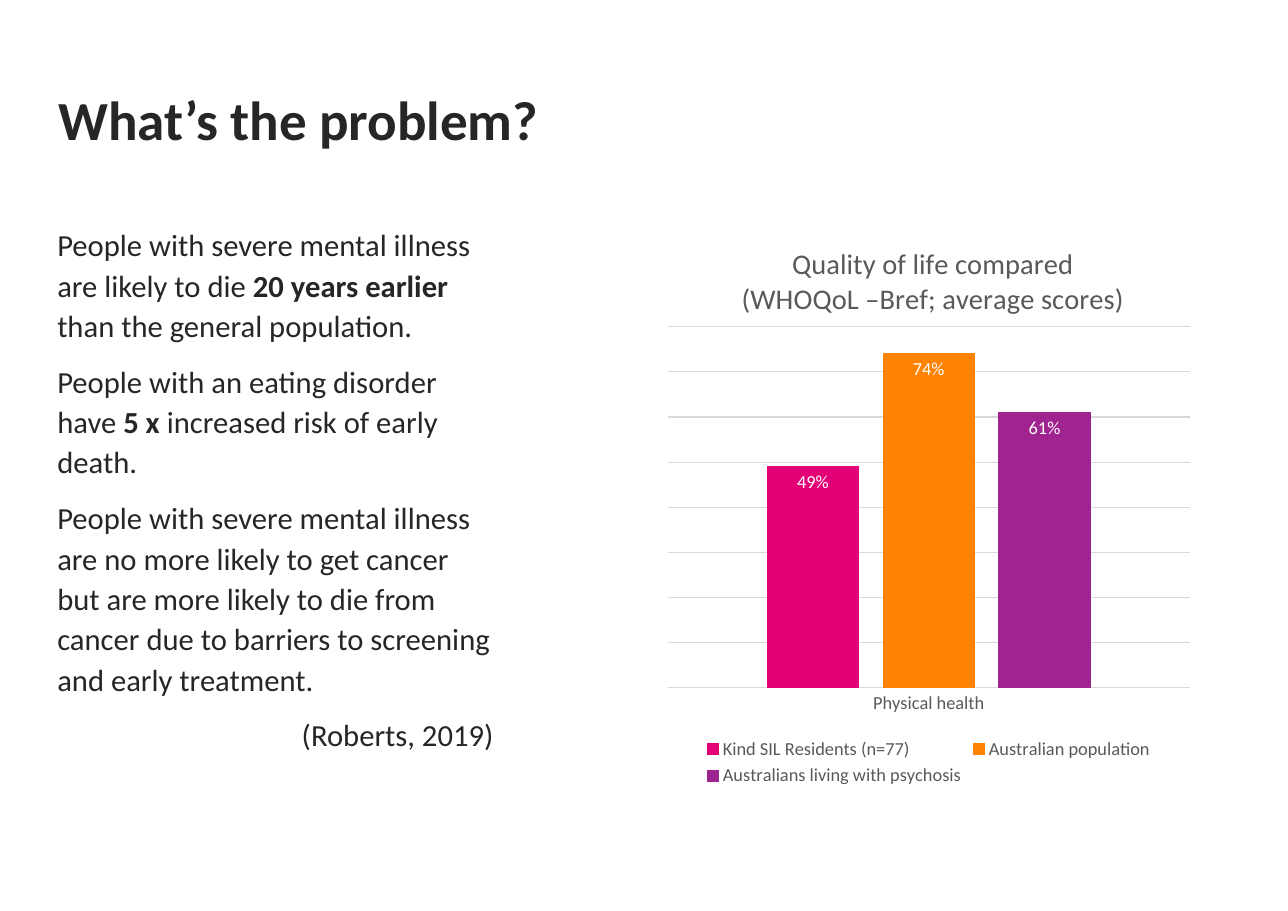
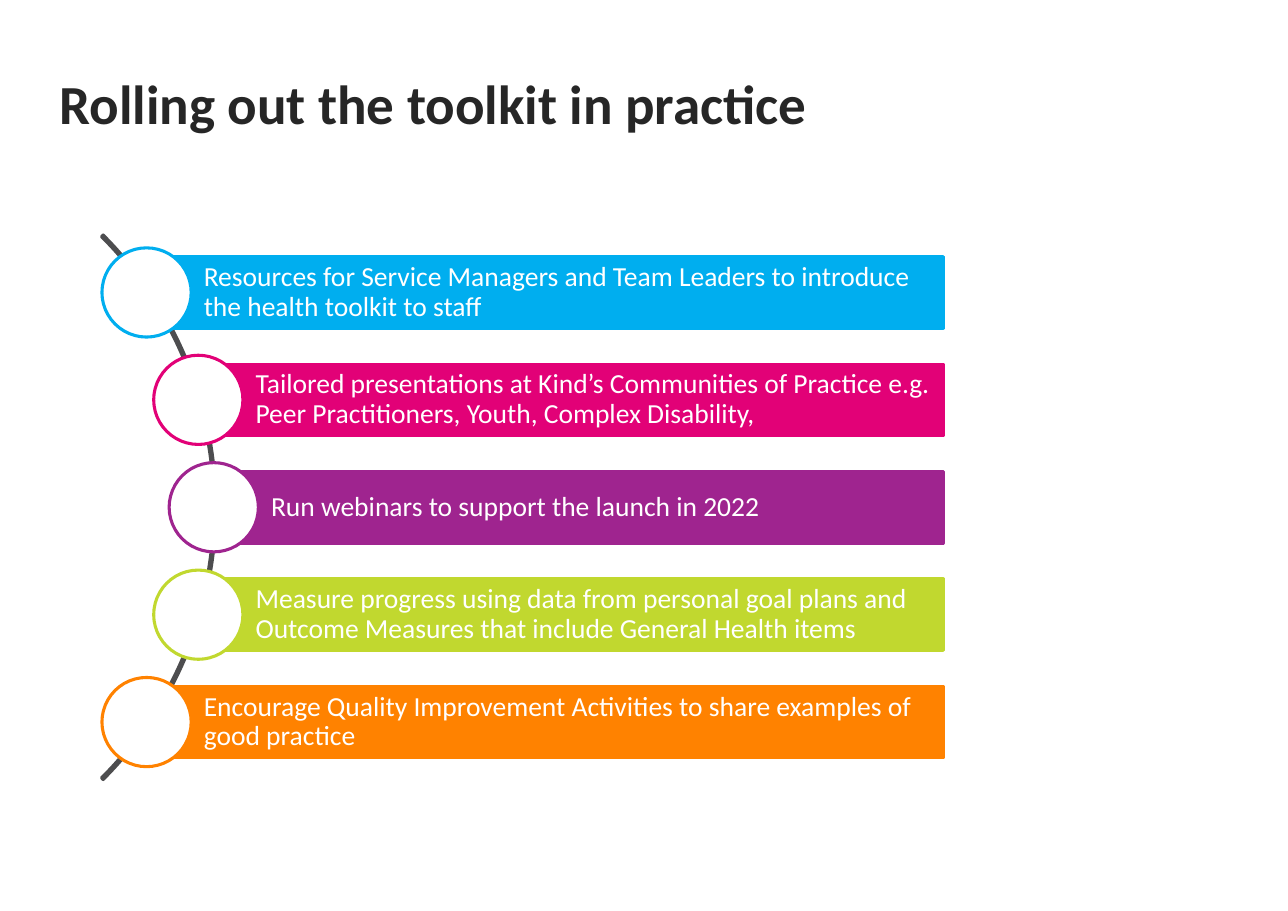
from dataclasses import dataclass

from lxml import etree
from pptx import Presentation
from pptx.chart.data import CategoryChartData
from pptx.dml.color import RGBColor
from pptx.enum import chart as ch, shapes, text
from pptx.oxml import ns
from pptx.util import Inches, Pt

FONT = "Calibri"
COLORS = {
    "ink": "262626", "grey": "595959", "grid": "D9D9D9", "arc": "4D4D4F",
    "white": "FFFFFF", "blue": "00AEEF", "pink": "E20177",
    "purple": "9F248F", "lime": "C1D82F", "orange": "FF8200",
}


@dataclass
class Para:
    runs: list[tuple[str, bool]]  # text, bold
    align: text.PP_ALIGN = text.PP_ALIGN.LEFT


@dataclass
class Series:
    name: str
    value: float
    color: str


@dataclass
class Step:
    left: float
    color: str
    label: str


PROBLEM = [
    Para([("People with severe mental illness are likely to die ", False),
          ("20 years earlier ", True), ("than the general population.", False)]),
    Para([("People with an eating disorder have ", False), ("5 x ", True),
          ("increased risk of early death.", False)]),
    Para([("People with severe mental illness are no more likely to get cancer "
           "but are more likely to die from cancer due to barriers to screening "
           "and early treatment.", False)]),
    Para([("(Roberts, 2019)", False)], text.PP_ALIGN.RIGHT),
]
SCORES = [
    Series("Kind SIL Residents (n=77)", 0.49, "pink"),
    Series("Australian population", 0.74, "orange"),
    Series("Australians living with psychosis", 0.61, "purple"),
]
STEPS = [
    Step(1.33, "blue", "Resources for Service Managers and Team Leaders to introduce "
                       "the health toolkit to staff"),
    Step(1.8, "pink", "Tailored presentations at Kind’s Communities of Practice "
                      "e.g. Peer Practitioners, Youth, Complex Disability,"),
    Step(1.94, "purple", "Run webinars to support the launch in 2022"),
    Step(1.8, "lime", "Measure progress using data from personal goal plans and "
                      "Outcome Measures that include General Health items"),
    Step(1.33, "orange", "Encourage Quality Improvement Activities to share examples of "
                         "good practice"),
]


def rgb(name: str) -> RGBColor:
    return RGBColor.from_string(COLORS[name])


def box(*lengths: float) -> list[Inches]:
    return [Inches(v) for v in lengths]


def style_font(font, size: float, color: str, bold: bool = False) -> None:
    font.name, font.size, font.bold = FONT, Pt(size), bold
    font.color.rgb = rgb(color)


def add_run(p, words: str, size: float, color: str, bold: bool = False) -> None:
    r = p.add_run()
    r.text = words
    style_font(r.font, size, color, bold)


def add_titled_slide(prs, title: str, *place: float):
    slide = prs.slides.add_slide(prs.slide_layouts[5])
    sp = slide.shapes.title
    sp.left, sp.top, sp.width, sp.height = box(*place)
    tf = sp.text_frame
    tf.vertical_anchor = text.MSO_ANCHOR.TOP
    tf.paragraphs[0].alignment = text.PP_ALIGN.LEFT
    add_run(tf.paragraphs[0], title, 36, "ink", True)
    return slide


def add_paragraphs(slide, paras: list[Para], *place: float) -> None:
    tf = slide.shapes.add_textbox(*box(*place)).text_frame
    tf.word_wrap = True
    tf.margin_left = tf.margin_right = Inches(0.09)
    tf.margin_top = tf.margin_bottom = Inches(0.04)
    for i, para in enumerate(paras):
        p = tf.add_paragraph() if i else tf.paragraphs[0]
        p.alignment, p.line_spacing = para.align, 1.1
        p.space_before = Pt(10 if i else 0)
        for words, bold in para.runs:
            add_run(p, words, 20, "ink", bold)


def set_layout(parent, before: str, **fractions: float) -> None:
    """Fix a chart part at fractions of the chart area."""
    for old in parent.findall(ns.qn("c:layout")):
        parent.remove(old)
    layout = etree.Element(ns.qn("c:layout"))
    manual = etree.SubElement(layout, ns.qn("c:manualLayout"))
    if "w" in fractions:
        etree.SubElement(manual, ns.qn("c:layoutTarget"), val="inner")
    for key in "xy":
        etree.SubElement(manual, ns.qn(f"c:{key}Mode"), val="edge")
    for key, value in fractions.items():
        etree.SubElement(manual, ns.qn(f"c:{key}"), val=str(value))
    parent.find(ns.qn(before)).addprevious(layout)


def add_score_chart(slide, scores: list[Series], *place: float) -> None:
    data = CategoryChartData(number_format="0%")
    data.categories = ["Physical health"]
    for s in scores:
        data.add_series(s.name, [s.value])
    chart = slide.shapes.add_chart(
        ch.XL_CHART_TYPE.COLUMN_CLUSTERED, *box(*place), data).chart
    style_font(chart.font, 12, "grey")

    # Title
    tf = chart.chart_title.text_frame
    for i, line in enumerate(["Quality of life compared", "(WHOQoL –Bref; average scores)"]):
        p = tf.add_paragraph() if i else tf.paragraphs[0]
        p.alignment = text.PP_ALIGN.CENTER
        add_run(p, line, 18.6, "grey")
    title = chart.chart_title._element
    chart.chart_title.include_in_layout = False
    set_layout(title, "c:overlay", x=0.15, y=0.04)

    # Legend
    chart.has_legend = True
    chart.legend.position = ch.XL_LEGEND_POSITION.BOTTOM
    chart.legend.include_in_layout = False
    style_font(chart.legend.font, 12, "grey")

    # Axes
    cat, val = chart.category_axis, chart.value_axis
    cat.major_tick_mark = ch.XL_TICK_MARK.NONE
    style_font(cat.tick_labels.font, 12, "grey")
    val.visible = False
    val.minimum_scale, val.maximum_scale, val.major_unit = 0, 0.8, 0.1
    val.has_major_gridlines = True
    for line in (cat.format.line, val.major_gridlines.format.line):
        line.color.rgb, line.width = rgb("grid"), Pt(0.75)

    # Columns
    plot = chart.plots[0]
    plot.gap_width, plot.overlap, plot.vary_by_categories = 219, -27, False
    set_layout(chart._chartSpace.chart.plotArea, "c:barChart",
               x=0.02, y=0.19, w=0.96, h=0.63)
    for s, series in zip(scores, plot.series):
        series.format.fill.solid()
        series.format.fill.fore_color.rgb = rgb(s.color)
        series.format.line.color.rgb = rgb(s.color)
        series.format.line.width = Pt(0.75)
        labels = series.data_labels
        labels.show_value = True
        labels.number_format, labels.number_format_is_linked = "0%", False
        labels.position = ch.XL_LABEL_POSITION.INSIDE_END
        style_font(labels.font, 12, "white")


def add_outlined(slide, kind, line: str, fill: str | None, *place: float):
    sp = slide.shapes.add_shape(kind, *box(*place))
    sp.shadow.inherit = False
    if fill:
        sp.fill.solid()
        sp.fill.fore_color.rgb = rgb(fill)
    else:
        sp.fill.background()
    sp.line.color.rgb, sp.line.width = rgb(line), Pt(2)
    return sp


def add_steps(slide, steps: list[Step]) -> None:
    right, first_mid, pitch, bar_h, circle = 8.56, 2.655, 0.975, 0.65, 0.81
    kinds = shapes.MSO_SHAPE

    # Curve behind the steps
    arc = add_outlined(slide, kinds.BLOCK_ARC, "arc", None, -5.03, 1.11, 6.99, 6.99)
    for i, value in enumerate((189, 27, 0.003)):
        arc.adjustments[i] = value

    # Bars, each with a circle centred on its left end
    for i, step in enumerate(steps):
        mid = first_mid + i * pitch
        bar = add_outlined(slide, kinds.RECTANGLE, step.color, step.color,
                           step.left, mid - bar_h / 2, right - step.left, bar_h)
        tf = bar.text_frame
        tf.word_wrap, tf.vertical_anchor = True, text.MSO_ANCHOR.MIDDLE
        tf.margin_left = Inches(0.52)
        tf.margin_right = tf.margin_top = tf.margin_bottom = Inches(0.05)
        p = tf.paragraphs[0]
        p.alignment, p.line_spacing = text.PP_ALIGN.LEFT, 0.9
        add_run(p, step.label, 18, "white")
        add_outlined(slide, kinds.OVAL, step.color, "white",
                     step.left - circle / 2, mid - circle / 2, circle, circle)


def main() -> None:
    prs = Presentation()
    prs.slide_width, prs.slide_height = box(11.69, 8.27)

    # Slide 1: the problem
    slide = add_titled_slide(prs, "What’s the problem?", 0.43, 0.73, 8.01, 0.92)
    add_paragraphs(slide, PROBLEM, 0.43, 1.98, 4.14, 5.61)
    add_score_chart(slide, SCORES, 5.96, 1.98, 4.94, 5.2)

    # Slide 2: the roll-out
    slide = add_titled_slide(prs, "Rolling out the toolkit in practice", 0.44, 0.58, 8.59, 0.83)
    add_steps(slide, STEPS)

    prs.save("out.pptx")


if __name__ == "__main__":
    main()
